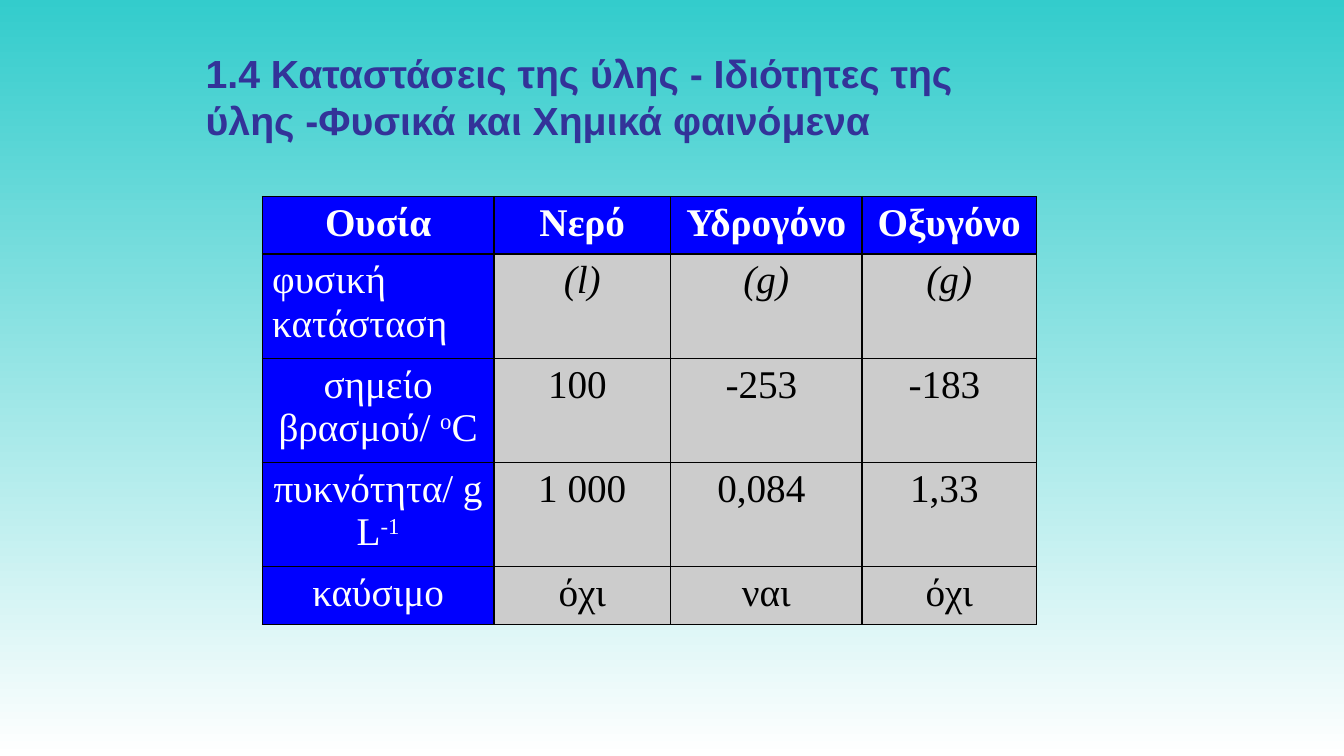
import pptx
import pptx.util
import pptx.dml.color
import pptx.enum.text
import pptx.oxml
import pptx.oxml.ns

Inches = pptx.util.Inches
Align = pptx.enum.text.PP_ALIGN
COLORS = {
    "teal": "33CCCC",
    "white": "FFFFFF",
    "indigo": "333399",
    "blue": "0000FF",
    "grey": "CCCCCC",
    "black": "000000",
}
COLUMN_WIDTHS = [2.3, 1.75, 1.9, 1.73]
ROW_HEIGHTS = [0.57, 1.03, 1.03, 1.03, 0.57]
SUBSTANCES = [
    ["Ουσία", "Νερό", "Υδρογόνο", "Οξυγόνο"],
    ["φυσική κατάσταση", "(l)", "(g)", "(g)"],
    ["σημείο βρασμού/ ^ο^C", "100 ", "-253 ", "-183 "],
    ["πυκνότητα/ g L^-1", "1 000", "0,084 ", "1,33 "],
    ["καύσιμο", "όχι", "ναι", "όχι"],
]


def color(name):
    return pptx.dml.color.RGBColor.from_string(COLORS[name])


def add_borders(cell):
    properties = cell._tc.get_or_add_tcPr()
    for index, side in enumerate(["lnL", "lnR", "lnT", "lnB"]):
        properties.insert(index, pptx.oxml.parse_xml(
            f'<a:{side} {pptx.oxml.ns.nsdecls("a")} w="12700"><a:solidFill>'
            f'<a:srgbClr val="{COLORS["black"]}"/></a:solidFill></a:{side}>'))


deck = pptx.Presentation()
deck.slide_width = Inches(13.33)
deck.slide_height = Inches(7.5)
page = deck.slides.add_slide(deck.slide_layouts[5])

backdrop = page.background.fill
backdrop.gradient()
backdrop.gradient_angle = 270
for stop, name in zip(backdrop.gradient_stops, ["teal", "white"]):
    stop.color.rgb = color(name)

title = page.shapes.title
title.left, title.top = Inches(1.94), Inches(0.44)
title.width, title.height = Inches(8.35), Inches(1.03)
frame = title.text_frame
frame.text = "1.4 Καταστάσεις της ύλης - Ιδιότητες της ύλης -Φυσικά και Χημικά φαινόμενα"
frame.word_wrap = True
frame.auto_size = pptx.enum.text.MSO_AUTO_SIZE.SHAPE_TO_FIT_TEXT
frame.vertical_anchor = pptx.enum.text.MSO_ANCHOR.MIDDLE
para = frame.paragraphs[0]
para.alignment = Align.LEFT
para.font.name = "Arial"
para.font.size = pptx.util.Pt(28)
para.font.bold = True
para.font.color.rgb = color("indigo")

table = page.shapes.add_table(
    len(ROW_HEIGHTS), len(COLUMN_WIDTHS), Inches(2.6), Inches(1.95),
    Inches(sum(COLUMN_WIDTHS)), Inches(sum(ROW_HEIGHTS))).table
table.horz_banding = False
for column, width in zip(table.columns, COLUMN_WIDTHS):
    column.width = Inches(width)
for row, height in zip(table.rows, ROW_HEIGHTS):
    row.height = Inches(height)

for row_index, values in enumerate(SUBSTANCES):
    for column_index, value in enumerate(values):
        heading = row_index == 0 or column_index == 0
        cell = table.cell(row_index, column_index)
        cell.fill.solid()
        cell.fill.fore_color.rgb = color("blue" if heading else "grey")
        add_borders(cell)
        para = cell.text_frame.paragraphs[0]
        para.alignment = Align.JUSTIFY if (row_index, column_index) == (1, 0) else Align.CENTER
        para.font.name = "Times New Roman"
        para.font.size = pptx.util.Pt(28)
        para.font.bold = row_index == 0
        para.font.italic = row_index == 1 and not heading
        para.font.color.rgb = color("white" if heading else "black")
        for part_index, part in enumerate(value.split("^")):
            span = para.add_run()
            span.text = part
            if part_index % 2:
                span._r.get_or_add_rPr().set("baseline", "30000")

deck.save("out.pptx")
